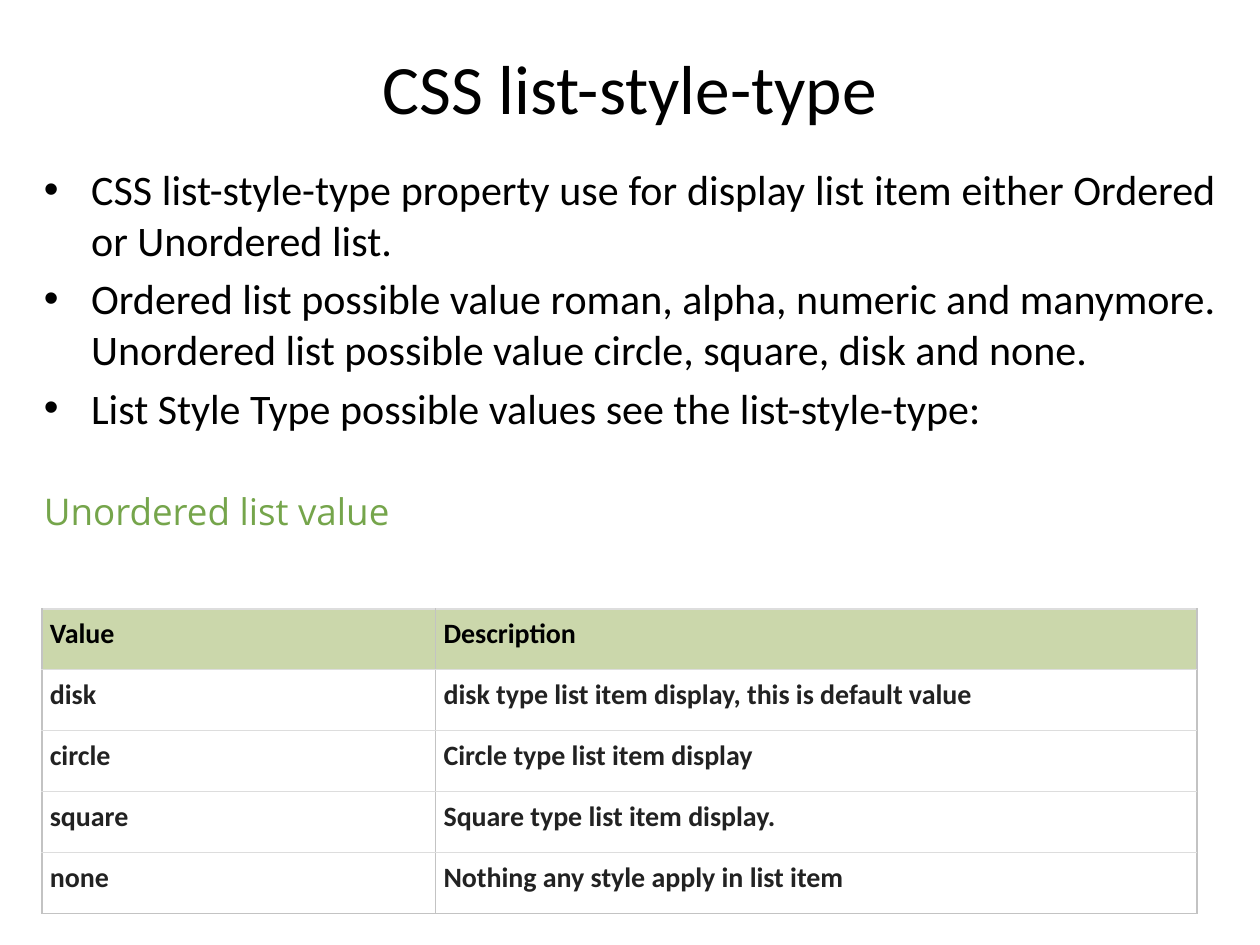
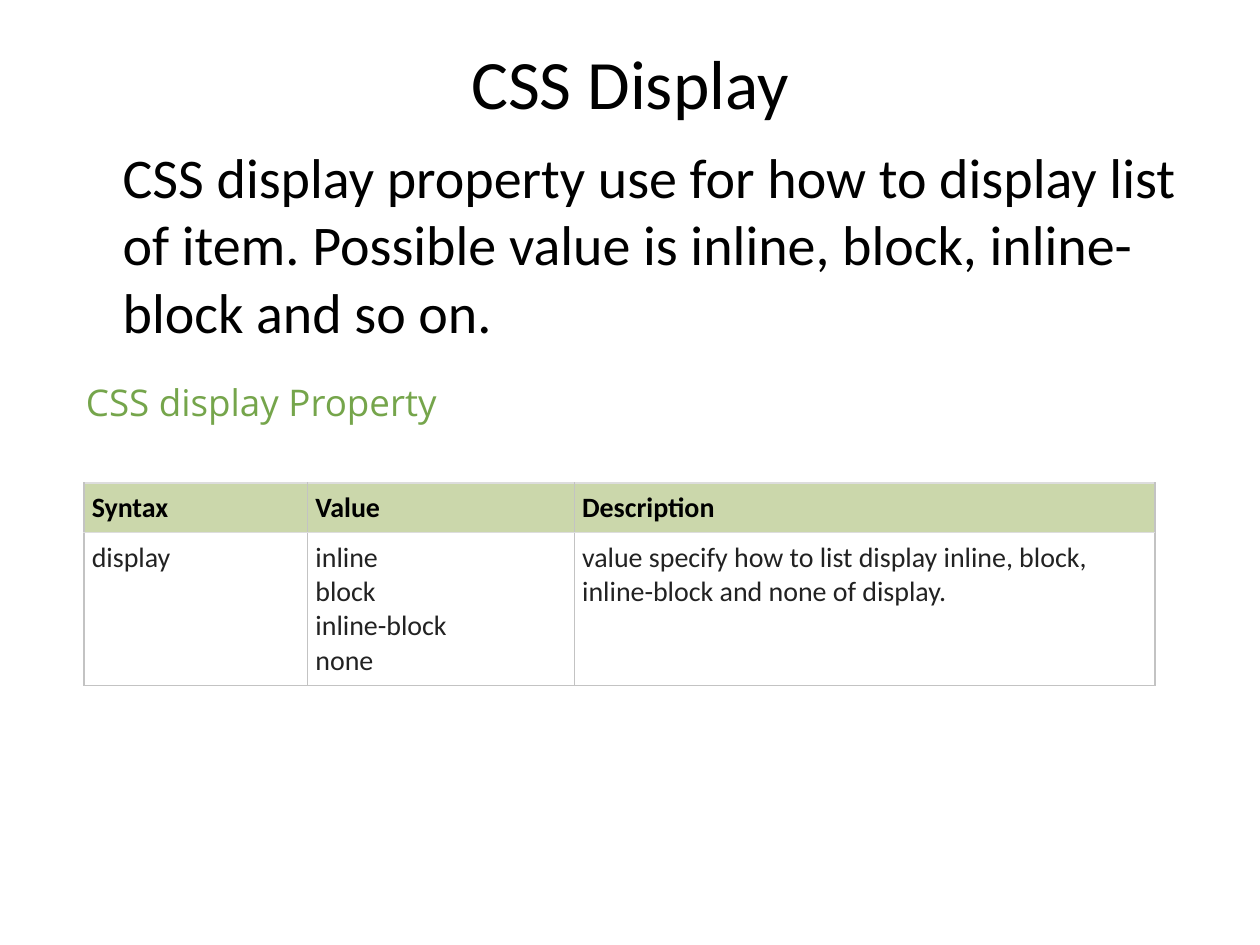
import copy
from dataclasses import dataclass

import lxml.etree
import pptx
import pptx.dml.color
import pptx.enum.shapes
import pptx.enum.text
import pptx.oxml
import pptx.oxml.ns
import pptx.util

GRID_UNIT = pptx.util.Inches(1 / 12)  # the slide is 120 columns by 90 rows
SLIDE_COLUMNS, SLIDE_ROWS = 120, 90
BLANK_LAYOUT = 6
CELL_INSET = 0.75
HANGING_INDENT = 4.5
BORDER_WIDTH = pptx.util.Pt(0.75)

COLORS = {
    "text": "000000",
    "cell_text": "222222",
    "heading": "75A54B",
    "header_fill": "CBD7AB",
    "page": "FFFFFF",
    "side_border": "C3C3C3",
    "row_border": "DDDDDD",
}

Align = pptx.enum.text.PP_ALIGN
Anchor = pptx.enum.text.MSO_ANCHOR


@dataclass(frozen=True)
class Area:
    """A rectangle in grid columns and rows."""
    left: float
    top: float
    width: float
    height: float

    def emu(self) -> list[int]:
        return [grid(n) for n in (self.left, self.top, self.width, self.height)]


@dataclass(frozen=True)
class TextStyle:
    size: float
    color: str = "text"
    font: str = "Calibri"
    bold: bool = False


@dataclass(frozen=True)
class Body:
    area: Area
    paragraphs: list[str]
    size: float
    align: Align = Align.LEFT
    bullet: bool = False


@dataclass(frozen=True)
class Heading:
    area: Area
    text: str
    top_inset: float


@dataclass(frozen=True)
class Grid:
    area: Area
    column_widths: list[float]
    row_heights: list[float]
    cells: list[list[str]]
    bold_values: bool


@dataclass(frozen=True)
class Topic:
    title: str
    title_height: float
    body: Body
    table: Grid
    heading: Heading


TITLE = TextStyle(39.6)
HEADING = TextStyle(21, "heading", "Open Sans")

TOPICS = [
    Topic(
        "CSS list-style-type",
        9.4,
        Body(
            Area(3, 15, 114, 29),
            [
                "CSS list-style-type property use for display list item either Ordered or Unordered list.",
                "Ordered list possible value roman, alpha, numeric and manymore.\v"
                "Unordered list possible value circle, square, disk and none.",
                "List Style Type possible values see the list-style-type:",
            ],
            24,
            Align.JUSTIFY,
            bullet=True,
        ),
        Grid(
            Area(4, 58, 110, 29),
            [37.5, 72.5],
            [5.8] * 5,
            [
                ["Value", "Description"],
                ["disk", "disk type list item display, this is default value"],
                ["circle", "Circle type list item display"],
                ["square", "Square type list item display."],
                ["none", "Nothing any style apply in list item"],
            ],
            bold_values=True,
        ),
        Heading(Area(3, 43, 108, 12.8), "Unordered list value", 3.5),
    ),
    Topic(
        "CSS Display",
        8.4,
        Body(
            Area(6, 13, 108, 22),
            ["CSS display property use for how to display list of item. "
             "Possible value is inline, block, inline-block and so on."],
            32,
        ),
        Grid(
            Area(8, 46, 102, 19.3),
            [21.3, 25.4, 55.3],
            [4.75, 14.55],
            [
                ["Syntax", "Value", "Description"],
                ["display", "inline\vblock\vinline-block\vnone",
                 "value specify how to list display inline, block, inline-block and none of display."],
            ],
            bold_values=False,
        ),
        Heading(Area(7, 34, 102, 11.4), "CSS display Property", 2.2),
    ),
]


def grid(units: float) -> int:
    return round(units * GRID_UNIT)


def rgb(name: str) -> pptx.dml.color.RGBColor:
    return pptx.dml.color.RGBColor.from_string(COLORS[name])


def apply(target, formats: dict) -> None:
    for name, value in formats.items():
        setattr(target, name, value)


def paint(fill, color: str) -> None:
    fill.solid()
    fill.fore_color.rgb = rgb(color)


def write(para, text: str, style: TextStyle, align: Align = Align.LEFT) -> None:
    """Fill a paragraph; each vertical tab in the text is a line break."""
    para.text = text
    para.alignment = align
    for span in para.runs:
        apply(span.font, {"size": pptx.util.Pt(style.size), "name": style.font, "bold": style.bold})
        span.font.color.rgb = rgb(style.color)
    for line_break in para._p.findall(pptx.oxml.ns.qn("a:br")):
        line_break.append(copy.deepcopy(para.runs[0]._r.rPr))


def add_box(page, area: Area, anchor: Anchor):
    box = page.shapes.add_textbox(*area.emu())
    apply(box.text_frame, {"word_wrap": True, "vertical_anchor": anchor})
    return box.text_frame


def indent(para, bullet: bool) -> None:
    props = para._p.get_or_add_pPr()
    props.set("marL", str(grid(HANGING_INDENT)))
    if bullet:
        props.set("indent", str(-grid(HANGING_INDENT)))
        font = lxml.etree.SubElement(props, pptx.oxml.ns.qn("a:buFont"))
        font.set("typeface", "Arial")
        mark = lxml.etree.SubElement(props, pptx.oxml.ns.qn("a:buChar"))
        mark.set("char", "•")


def add_body(page, body: Body) -> None:
    frame = add_box(page, body.area, Anchor.TOP)
    for number, text in enumerate(body.paragraphs):
        para = frame.add_paragraph() if number else frame.paragraphs[0]
        write(para, text, TextStyle(body.size), body.align)
        para.space_before = pptx.util.Pt(body.size * 0.2)
        indent(para, body.bullet)


def add_heading(page, heading: Heading) -> None:
    box = page.shapes.add_shape(pptx.enum.shapes.MSO_SHAPE.RECTANGLE, *heading.area.emu())
    box.shadow.inherit = False
    box.line.fill.background()
    paint(box.fill, "page")
    apply(box.text_frame, {
        "word_wrap": True,
        "vertical_anchor": Anchor.TOP,
        "margin_top": grid(heading.top_inset),
    })
    write(box.text_frame.paragraphs[0], heading.text, HEADING)


def add_borders(cell, bottom: str) -> None:
    sides = {"L": "side_border", "R": "side_border", "T": "row_border", "B": bottom}
    props = cell._tc.get_or_add_tcPr()
    for position, (side, color) in enumerate(sides.items()):
        props.insert(position, pptx.oxml.parse_xml(
            f'<a:ln{side} {pptx.oxml.ns.nsdecls("a")} w="{BORDER_WIDTH}"><a:solidFill>'
            f'<a:srgbClr val="{COLORS[color]}"/></a:solidFill></a:ln{side}>'))


def add_grid(page, spec_table: Grid) -> None:
    rows, columns = len(spec_table.row_heights), len(spec_table.column_widths)
    table = page.shapes.add_table(rows, columns, *spec_table.area.emu()).table
    apply(table, {"first_row": False, "horz_banding": False})
    for column, width in zip(table.columns, spec_table.column_widths):
        column.width = grid(width)
    for row, height in zip(table.rows, spec_table.row_heights):
        row.height = grid(height)

    header_style = TextStyle(16, bold=True)
    value_style = TextStyle(16, "cell_text", bold=spec_table.bold_values)
    margins = {f"margin_{side}": grid(CELL_INSET) for side in ("left", "top", "right", "bottom")}
    for row_number, texts in enumerate(spec_table.cells):
        is_header = row_number == 0
        is_last = row_number == rows - 1
        for column_number, text in enumerate(texts):
            cell = table.cell(row_number, column_number)
            apply(cell, margins)
            paint(cell.fill, "header_fill" if is_header else "page")
            add_borders(cell, "side_border" if is_last else "row_border")
            write(cell.text_frame.paragraphs[0], text, header_style if is_header else value_style)


def add_topic(deck, topic: Topic) -> None:
    page = deck.slides.add_slide(deck.slide_layouts[BLANK_LAYOUT])
    title = add_box(page, Area(6, 3.6, 108, topic.title_height), Anchor.MIDDLE)
    write(title.paragraphs[0], topic.title, TITLE, Align.CENTER)
    add_body(page, topic.body)
    add_grid(page, topic.table)
    add_heading(page, topic.heading)


def main() -> None:
    deck = pptx.Presentation()
    apply(deck, {"slide_width": grid(SLIDE_COLUMNS), "slide_height": grid(SLIDE_ROWS)})
    for topic in TOPICS:
        add_topic(deck, topic)
    deck.save("out.pptx")


if __name__ == "__main__":
    main()
